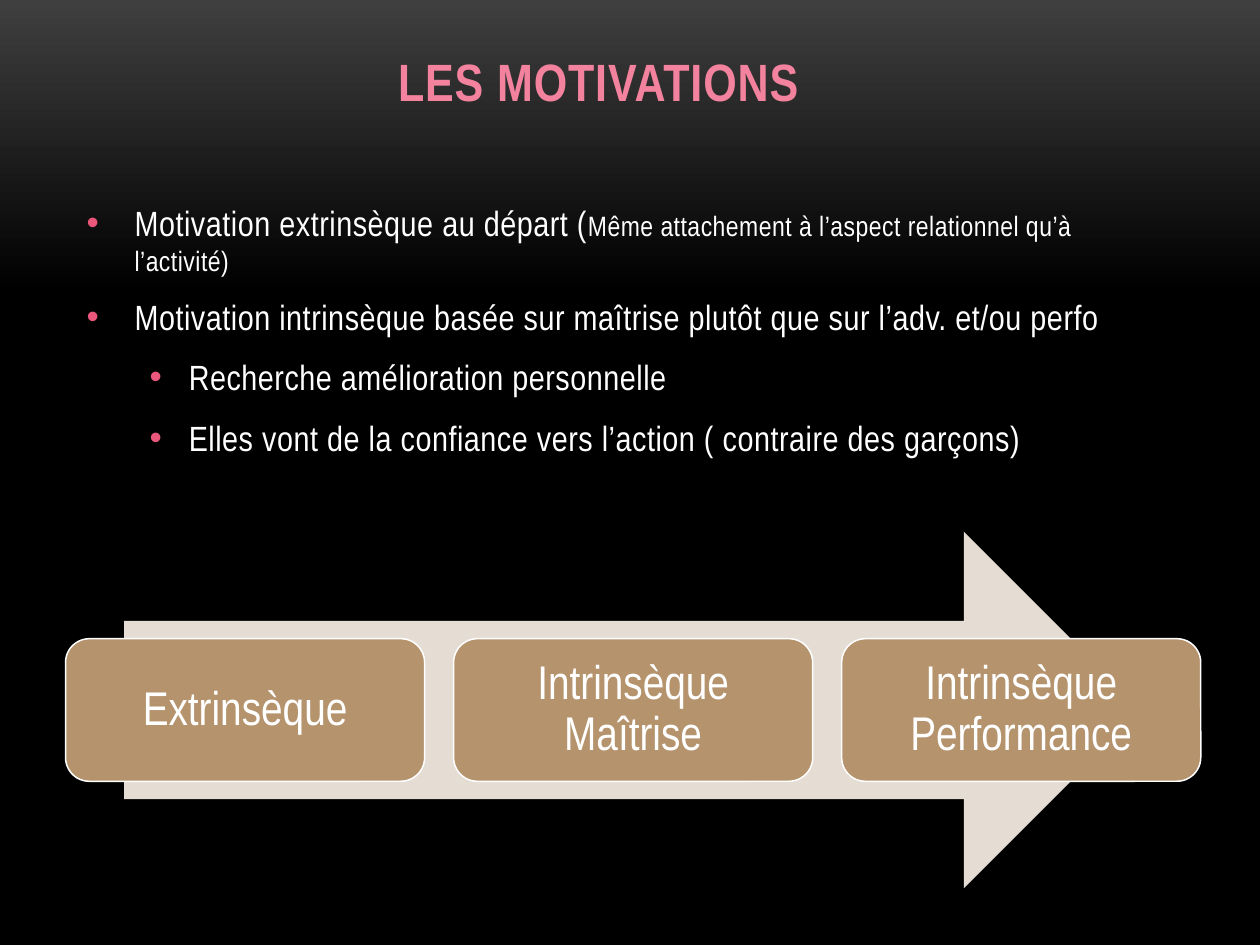
from dataclasses import dataclass

from lxml.etree import SubElement
from pptx import Presentation
from pptx.dml.color import RGBColor
from pptx.enum.shapes import MSO_SHAPE as Preset
from pptx.enum.text import MSO_ANCHOR as Anchor, PP_ALIGN as Align
from pptx.oxml.ns import qn
from pptx.util import Inches, Pt


@dataclass(frozen=True)
class Theme:
    font: str = "Arial Narrow"
    title: RGBColor = RGBColor(0xF2, 0x82, 0x9D)
    text: RGBColor = RGBColor(0xFF, 0xFF, 0xFF)
    bullet: str = "EB577A"
    arrow: RGBColor = RGBColor(0xE5, 0xDC, 0xD4)
    step: RGBColor = RGBColor(0xB4, 0x93, 0x6D)
    background_top: RGBColor = RGBColor(0x3F, 0x3F, 0x3F)
    background: RGBColor = RGBColor(0, 0, 0)
    title_size: Pt = Pt(30)
    body_size: Pt = Pt(20)
    aside_size: Pt = Pt(16)
    step_size: Pt = Pt(27)


THEME = Theme()

# Each item: indent level, then its runs of text and size
BULLETS = [
    (0, [("Motivation extrinsèque au départ (", THEME.body_size),
         ("Même attachement à l’aspect relationnel qu’à l’activité)", THEME.aside_size)]),
    (0, [("Motivation intrinsèque basée sur maîtrise plutôt que sur l’adv. et/ou perfo",
          THEME.body_size)]),
    (1, [("Recherche amélioration personnelle", THEME.body_size)]),
    (1, [("Elles vont de la confiance vers l’action ( contraire des garçons)",
          THEME.body_size)]),
]
INDENTS = [(0.38, -0.38), (0.81, -0.31)]
STEPS = ["Extrinsèque", "Intrinsèque Maîtrise", "Intrinsèque Performance"]


def set_format(target, **values):
    for name, value in values.items():
        setattr(target, name, value)


def add_run(paragraph, text, size, color=THEME.text, bold=False, spacing=0):
    """Add a run; spacing is the letter spacing in hundredths of a point."""
    run = paragraph.add_run()
    run.text = text
    set_format(run.font, name=THEME.font, size=size, bold=bold)
    run.font.color.rgb = color
    if spacing:
        run.font._element.set("spc", str(spacing))


def add_bullet(paragraph, level):
    margin, indent = INDENTS[level]
    properties = paragraph._p.get_or_add_pPr()
    properties.set("marL", str(Inches(margin)))
    properties.set("indent", str(Inches(indent)))
    color = SubElement(properties, qn("a:buClr"))
    SubElement(color, qn("a:srgbClr")).set("val", THEME.bullet)
    SubElement(properties, qn("a:buFont")).set("typeface", "Arial")
    SubElement(properties, qn("a:buChar")).set("char", "•")


def paint_background(slide):
    fill = slide.background.fill
    fill.gradient()
    fill.gradient_angle = 270
    stops = [(0, THEME.background_top), (0.31, THEME.background)]
    for stop, (position, color) in zip(fill.gradient_stops, stops):
        stop.position = position
        stop.color.rgb = color


def add_title(slide, left, top, width, height):
    frame = slide.shapes.add_textbox(left, top, width, height).text_frame
    set_format(frame, word_wrap=True, vertical_anchor=Anchor.BOTTOM)
    paragraph = frame.paragraphs[0]
    paragraph.alignment = Align.CENTER
    add_run(paragraph, "LES MOTIVATIONS", THEME.title_size, THEME.title, True, 50)


def add_body(slide, left, top, width, height):
    frame = slide.shapes.add_textbox(left, top, width, height).text_frame
    frame.word_wrap = True
    for index, (level, runs) in enumerate(BULLETS):
        paragraph = frame.add_paragraph() if index else frame.paragraphs[0]
        add_bullet(paragraph, level)
        set_format(paragraph, level=level, space_after=Pt(6),
                   space_before=Pt(4.5 if index else 0))
        for text, size in runs:
            add_run(paragraph, text, size, spacing=30)


def add_filled(shapes, preset, color, left, top, width, height):
    shape = shapes.add_shape(preset, left, top, width, height)
    shape.shadow.inherit = False
    shape.fill.solid()
    shape.fill.fore_color.rgb = color
    return shape


def add_process(slide, left, top, width, height):
    """Lay equal steps over a wide arrow, both centred in the box."""
    shapes = slide.shapes.add_group_shape().shapes
    arrow_width = Inches(8.08)
    arrow = add_filled(shapes, Preset.RIGHT_ARROW, THEME.arrow,
                       left + (width - arrow_width) // 2, top, arrow_width, height)
    arrow.line.fill.background()

    step_width, step_height = Inches(2.85), int(height * 0.4)
    pitch = (width - step_width) // (len(STEPS) - 1)
    step_top = top + (height - step_height) // 2
    inset = Inches(0.16)
    for index, label in enumerate(STEPS):
        step = add_filled(shapes, Preset.ROUNDED_RECTANGLE, THEME.step,
                          left + index * pitch, step_top, step_width, step_height)
        step.line.color.rgb = THEME.text
        step.line.width = Pt(0.85)
        frame = step.text_frame
        set_format(frame, word_wrap=True, vertical_anchor=Anchor.MIDDLE,
                   margin_left=inset, margin_right=inset,
                   margin_top=inset, margin_bottom=inset)
        paragraph = frame.paragraphs[0]
        set_format(paragraph, alignment=Align.CENTER, line_spacing=0.9)
        add_run(paragraph, label, THEME.step_size)


def main():
    presentation = Presentation()
    set_format(presentation, slide_width=Inches(10), slide_height=Inches(7.5))
    slide = presentation.slides.add_slide(presentation.slide_layouts[6])
    paint_background(slide)
    add_title(slide, Inches(0), Inches(0.29), Inches(9.5), Inches(0.65))
    add_body(slide, Inches(0.59), Inches(1.55), Inches(8.5), Inches(3.23))
    add_process(slide, Inches(0.52), Inches(4.22), Inches(9.01), Inches(2.83))
    presentation.save("out.pptx")


if __name__ == "__main__":
    main()
